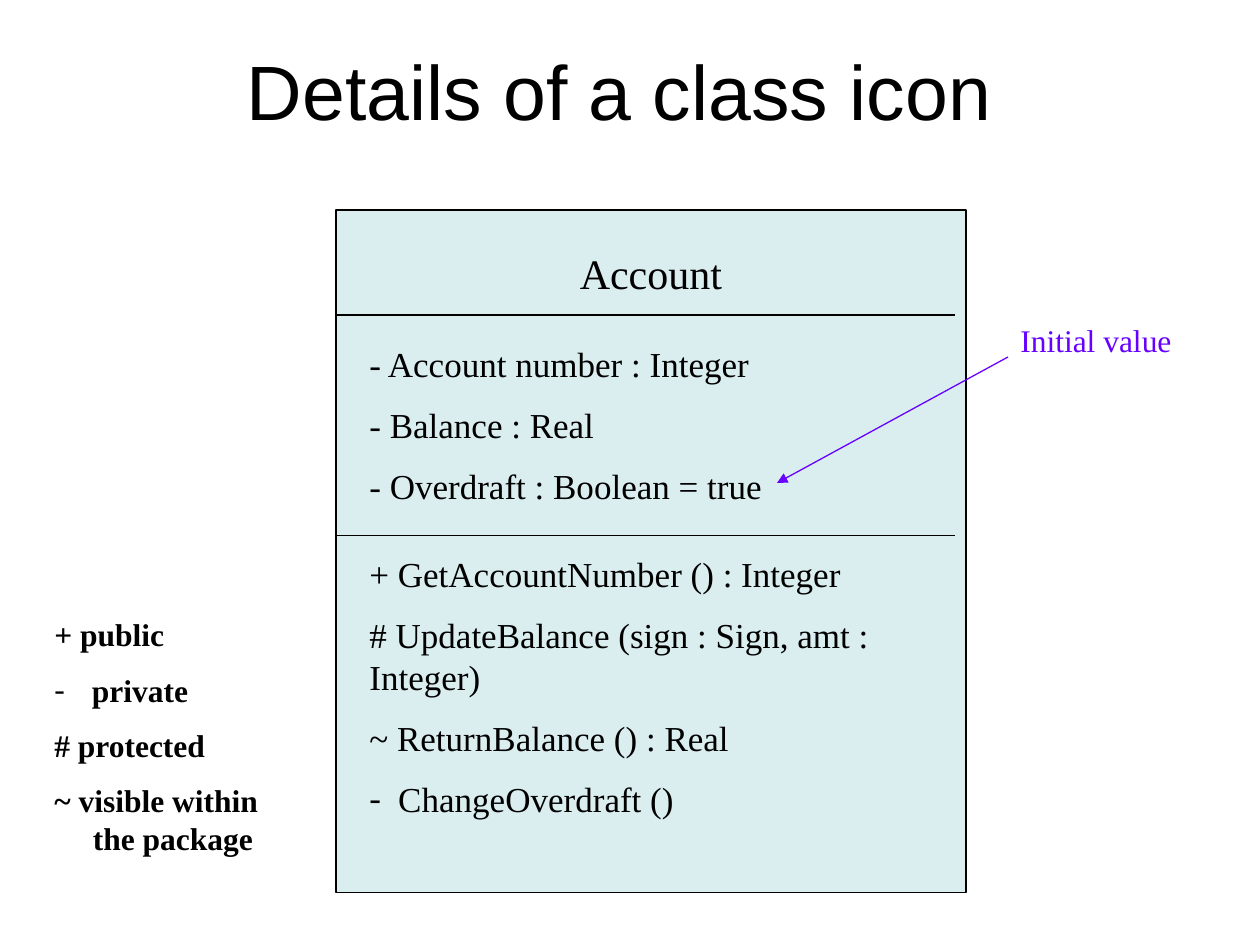
import pptx
import pptx.util
import pptx.dml.color
import pptx.enum.text
import pptx.enum.shapes
import pptx.oxml.ns
from lxml import etree

Pt = pptx.util.Pt
Rgb = pptx.dml.color.RGBColor.from_string
Align = pptx.enum.text.PP_ALIGN
theme = {
    "sans": "Arial", "serif": "Times New Roman",
    "ink": Rgb("000000"), "fill": Rgb("DAEDEF"), "note": Rgb("6600FF"),
    "title": 44, "name": 24, "body": 20, "small": 18,
    "rule": 0.75, "gap": 0.55,
}
qn = pptx.oxml.ns.qn


def write(box, rows, font, size, color, bold=False, align=Align.LEFT):
    frame = box.text_frame
    frame.word_wrap = True
    for i, (text, hang, mark) in enumerate(rows):
        para = frame.add_paragraph() if i else frame.paragraphs[0]
        para.alignment = align
        para.space_before = Pt(round(size * theme["gap"]) if i else 0)
        run = para.add_run()
        run.text = text
        run.font.name = font
        run.font.size = Pt(size)
        run.font.bold = bold
        run.font.color.rgb = color
        prop = para._p.get_or_add_pPr()
        if hang:
            prop.set("marL", str(Pt(hang)))
            prop.set("indent", str(-Pt(hang)))
        if mark:
            etree.SubElement(prop, qn("a:buFont"), typeface=font)
            etree.SubElement(prop, qn("a:buChar"), char=mark)


def draw(x1, y1, x2, y2, color):
    line = slide.shapes.add_connector(
        pptx.enum.shapes.MSO_CONNECTOR.STRAIGHT, Pt(x1), Pt(y1), Pt(x2), Pt(y2))
    line.line.color.rgb = color
    line.line.width = Pt(theme["rule"])
    etree.SubElement(line._element.spPr, qn("a:effectLst"))
    return line


deck = pptx.Presentation()
deck.slide_width, deck.slide_height = Pt(720), Pt(540)
slide = deck.slides.add_slide(deck.slide_layouts[5])

title = slide.shapes.title
title.left, title.top, title.width, title.height = Pt(48), Pt(18), Pt(612), Pt(66)
title.text_frame.vertical_anchor = pptx.enum.text.MSO_ANCHOR.MIDDLE
write(title, [("Details of a class icon", 0, "")], theme["sans"],
      theme["title"], theme["ink"], align=Align.CENTER)

card = slide.shapes.add_shape(
    pptx.enum.shapes.MSO_SHAPE.RECTANGLE, Pt(192), Pt(120), Pt(360), Pt(390))
card.shadow.inherit = False
card.fill.solid()
card.fill.fore_color.rgb = theme["fill"]
card.line.color.rgb = theme["ink"]
card.line.width = Pt(theme["rule"])

for y in (180, 306):
    draw(192, y, 546, y, theme["ink"])

fields = [("- Account number : Integer", 0, ""),
          ("- Balance : Real", 0, ""),
          ("- Overdraft : Boolean = true", 0, "")]
calls = [("+ GetAccountNumber () : Integer", 0, ""),
         ("# UpdateBalance (sign : Sign, amt : Integer)", 0, ""),
         ("~ ReturnBalance () : Real", 0, ""),
         ("ChangeOverdraft ()", 16.5, "-")]
legend = [("+ public", 0, ""),
          ("private", 21.5, "-"),
          ("# protected", 0, ""),
          ("~ visible within the package", 22, "")]
blocks = [
    (210, 138, 324, 36, [("Account", 0, "")], "name", "ink", False, Align.CENTER),
    (204, 192, 324, 103, fields, "body", "ink", False, Align.LEFT),
    (204, 312, 330, 163, calls, "body", "ink", False, Align.LEFT),
    (24, 348, 138, 148, legend, "small", "ink", True, Align.LEFT),
    (576, 180, 144, 29, [("Initial value", 0, "")], "small", "note", False, Align.LEFT),
]
for x, y, w, h, rows, size, color, bold, align in blocks:
    box = slide.shapes.add_textbox(Pt(x), Pt(y), Pt(w), Pt(h))
    box.text_frame.auto_size = pptx.enum.text.MSO_AUTO_SIZE.SHAPE_TO_FIT_TEXT
    write(box, rows, theme["serif"], theme[size], theme[color], bold, align)

arrow = draw(576, 204, 444, 276, theme["note"])
etree.SubElement(arrow.line._get_or_add_ln(), qn("a:tailEnd"), type="triangle")

deck.save("out.pptx")
